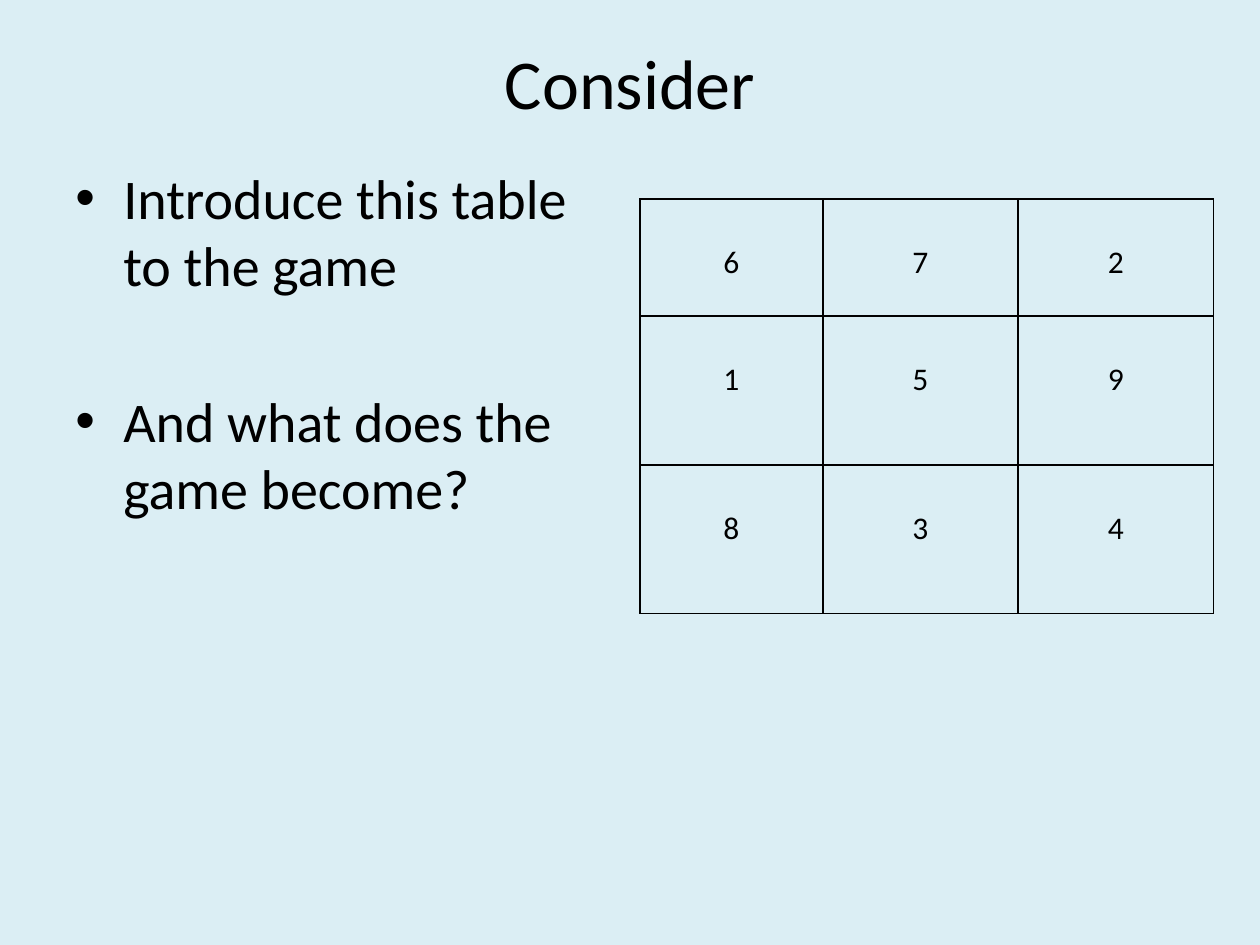
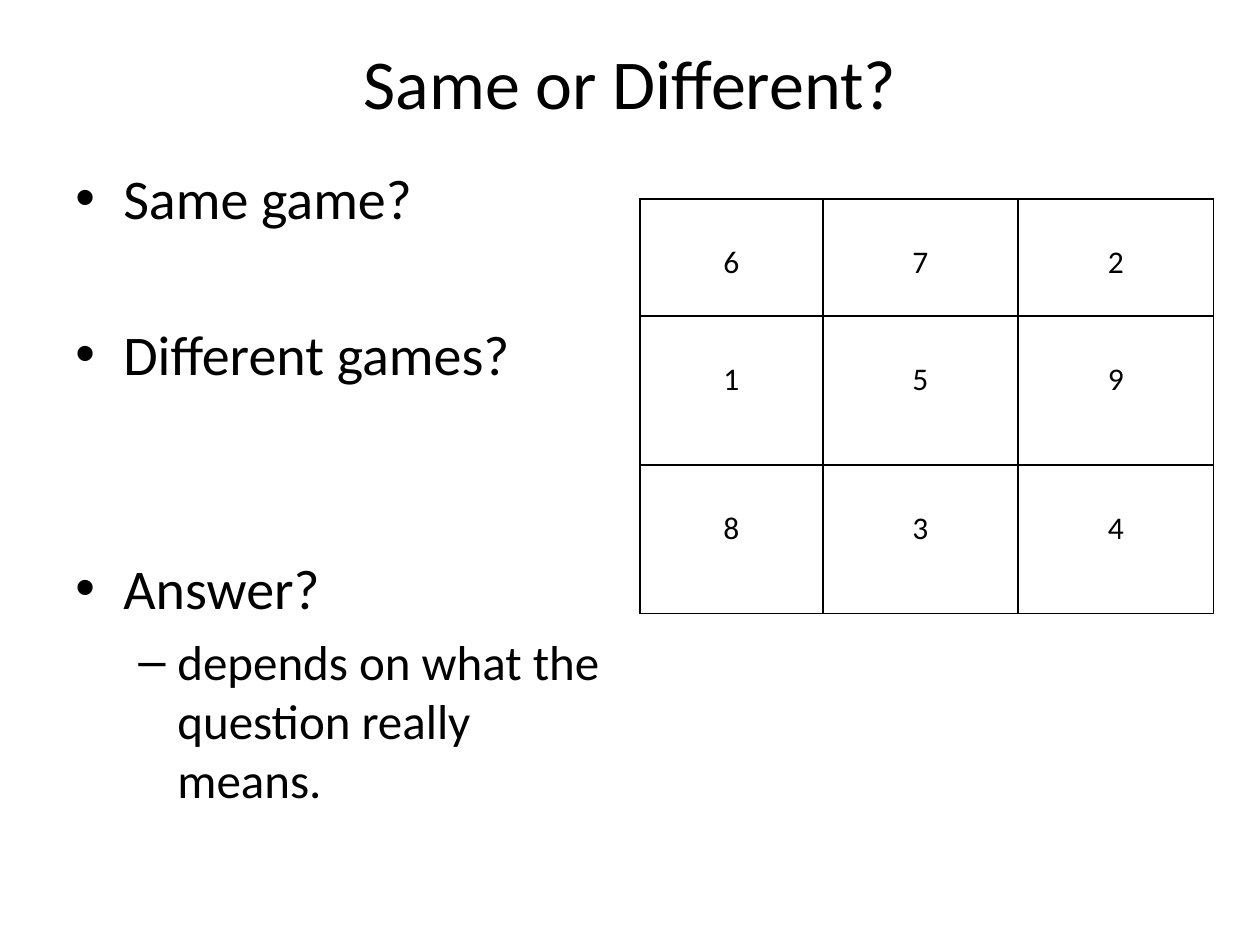
from lxml import etree
from pptx import Presentation
from pptx.dml.color import RGBColor
from pptx.enum import text
from pptx.oxml.ns import qn
from pptx.util import Inches, Pt

BLACK = RGBColor(0x00, 0x00, 0x00)
WHITE = RGBColor(0xFF, 0xFF, 0xFF)
PALE_BLUE = RGBColor(0xDB, 0xEE, 0xF4)

SLIDES = [
    {"title": "Consider", "background": PALE_BLUE, "points": [
        ("Introduce this table to the game", 0, 0),
        ("And what does the game become?", 0, 50.5),
    ]},
    {"title": "Same or Different?", "background": WHITE, "points": [
        ("Same game?", 0, 0),
        ("Different games?", 0, 50.5),
        ("Answer?", 0, 95.5),
        ("depends on what the question really means.", 1, 6),
    ]},
]
SQUARE = [(6, 7, 2), (1, 5, 9), (8, 3, 4)]
COLUMNS = [1.45, 1.55, 1.55]
ROWS = [0.93, 1.18, 1.18]

TITLE_BOX = (0.5, 0.3, 9, 0.7)
POINTS_BOX = (0.5, 1.25, 4.42, 5.45)
TABLE_BOX = (5.08, 1.58, sum(COLUMNS), sum(ROWS))

TITLE_FONT = {"name": "Calibri", "size": Pt(40)}
CELL_FONT = {"name": "Calibri", "size": Pt(18)}
LEVELS = [
    {"bullet": "•", "left": 0.38, "hang": 0.38,
     "font": {"name": "Calibri", "size": Pt(32)}},
    {"bullet": "–", "left": 0.81, "hang": 0.31,
     "font": {"name": "Calibri", "size": Pt(28)}},
]


def inches(box):
    return [Inches(v) for v in box]


def write(p, words, font):
    r = p.add_run()
    r.text = words
    for name, value in font.items():
        setattr(r.font, name, value)
    r.font.color.rgb = BLACK


def add_title(s, words):
    sp = s.shapes.title
    sp.left, sp.top, sp.width, sp.height = inches(TITLE_BOX)
    tf = sp.text_frame
    tf.vertical_anchor = text.MSO_ANCHOR.MIDDLE
    p = tf.paragraphs[0]
    p.alignment = text.PP_ALIGN.CENTER
    write(p, words, TITLE_FONT)


def add_points(s, points):
    tf = s.shapes.add_textbox(*inches(POINTS_BOX)).text_frame
    tf.word_wrap = True
    for i, (words, depth, before) in enumerate(points):
        level = LEVELS[depth]
        p = tf.add_paragraph() if i else tf.paragraphs[0]
        p.level = depth
        p.space_before = Pt(before)
        pPr = p._p.get_or_add_pPr()
        pPr.set("marL", str(Inches(level["left"])))
        pPr.set("indent", str(-Inches(level["hang"])))
        etree.SubElement(pPr, qn("a:buFont"), typeface="Arial")
        etree.SubElement(pPr, qn("a:buChar"), char=level["bullet"])
        write(p, words, level["font"])


def add_borders(cell):
    tcPr = cell._tc.get_or_add_tcPr()
    for i, side in enumerate(("lnL", "lnR", "lnT", "lnB")):
        ln = etree.Element(qn(f"a:{side}"), w=str(Pt(1)))
        fill = etree.SubElement(ln, qn("a:solidFill"))
        etree.SubElement(fill, qn("a:srgbClr"), val=str(BLACK))
        tcPr.insert(i, ln)


def add_square(s):
    table = s.shapes.add_table(len(ROWS), len(COLUMNS), *inches(TABLE_BOX)).table
    table.first_row = table.horz_banding = False
    for column, width in zip(table.columns, COLUMNS):
        column.width = Inches(width)
    for row, height, numbers in zip(table.rows, ROWS, SQUARE):
        row.height = Inches(height)
        for cell, number in zip(row.cells, numbers):
            cell.fill.background()
            cell.margin_top = Inches(0.35)
            add_borders(cell)
            p = cell.text_frame.paragraphs[0]
            p.alignment = text.PP_ALIGN.CENTER
            write(p, str(number), CELL_FONT)


def main():
    prs = Presentation()
    prs.slide_width, prs.slide_height = Inches(10), Inches(7.5)
    for content in SLIDES:
        s = prs.slides.add_slide(prs.slide_layouts[5])
        fill = s.background.fill
        fill.solid()
        fill.fore_color.rgb = content["background"]
        add_title(s, content["title"])
        add_points(s, content["points"])
        add_square(s)
    prs.save("out.pptx")


if __name__ == "__main__":
    main()
